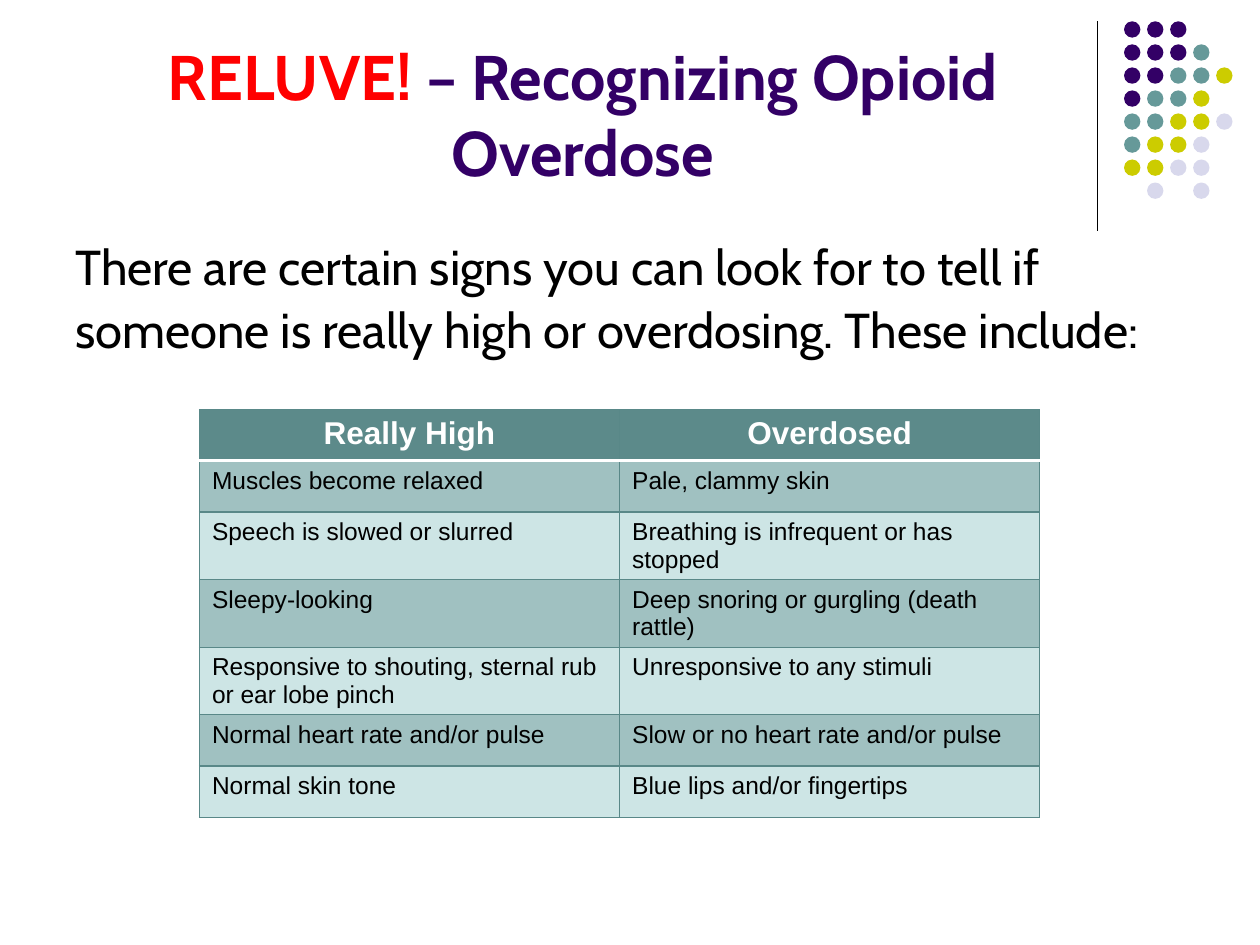
import pptx
import pptx.util
import pptx.dml.color
import pptx.enum.shapes
import pptx.enum.text
import pptx.oxml
import pptx.oxml.ns
from pptx.util import Cm, Pt

HUES = {
    "ink": "000000", "white": "FFFFFF", "red": "FF0000",
    "plum": "330066", "teal": "669999", "lime": "CCCC00", "mist": "D8D8EC",
    "head": "5C8A8A", "dark": "A0C1C1", "light": "CDE5E5", "edge": "598888",
}
DOTS = ["PPP", "PPPT", "PPTTL", "PTTL", "TTLLM", "TLLM", "LLMM", " M M"]
KEYS = {"P": "plum", "T": "teal", "L": "lime", "M": "mist"}
STEP = 3.25 / (len(DOTS) - 1)
ROWS = [
    ("Really High", "Overdosed"),
    ("Muscles become relaxed", "Pale, clammy skin"),
    ("Speech is slowed or slurred", "Breathing is infrequent or has stopped"),
    ("Sleepy-looking", "Deep snoring or gurgling (death rattle)"),
    ("Responsive to shouting, sternal rub or ear lobe pinch",
     "Unresponsive to any stimuli"),
    ("Normal heart rate and/or pulse", "Slow or no heart rate and/or pulse"),
    ("Normal skin tone", "Blue lips and/or fingertips"),
]
TITLE = {"name": "Cabin", "size": Pt(36), "bold": True}
BODY = {"name": "Cabin", "size": Pt(28), "bold": False}
HEAD = {"name": "Arial", "size": Pt(18), "bold": True}
CELL = {"name": "Arial", "size": Pt(14), "bold": False}
MID = pptx.enum.text.PP_ALIGN.CENTER


def rgb(hue):
    return pptx.dml.color.RGBColor.from_string(HUES[hue])


def paint(thing, hue):
    thing.fill.solid()
    thing.fill.fore_color.rgb = rgb(hue)


def add_run(para, text, form, hue):
    run = para.add_run()
    run.text = text
    for key, value in form.items():
        setattr(run.font, key, value)
    run.font.color.rgb = rgb(hue)


def add_box(slide, left, top, width, height):
    box = slide.shapes.add_textbox(Cm(left), Cm(top), Cm(width), Cm(height))
    box.text_frame.word_wrap = True
    return box.text_frame


def add_title(slide):
    frame = add_box(slide, 1.27, 0.33, 20.96, 3.61)
    frame.vertical_anchor = pptx.enum.text.MSO_ANCHOR.BOTTOM
    para = frame.paragraphs[0]
    para.alignment = MID
    add_run(para, "RELUVE!", TITLE, "red")
    add_run(para, " – Recognizing Opioid Overdose", TITLE, "plum")


def add_body(slide, lines):
    frame = add_box(slide, 1.27, 4.78, 22.86, 12.24)
    for i, line in enumerate(lines):
        para = frame.add_paragraph() if i else frame.paragraphs[0]
        para.line_spacing = 0.9
        para.space_before = Pt(5.6)
        props = para._p.get_or_add_pPr()
        props.set("marL", str(Cm(1.57)))
        props.set("indent", str(Cm(-1.57)))
        add_run(para, line, BODY, "ink")


def add_rule(slide):
    rule = slide.shapes.add_connector(
        pptx.enum.shapes.MSO_CONNECTOR.STRAIGHT,
        Cm(22.12), Cm(0.43), Cm(22.12), Cm(4.65))
    rule.line.color.rgb = rgb("ink")
    rule.line.width = Pt(0.75)
    rule._element.spPr.append(pptx.oxml.parse_xml(
        f'<a:effectLst {pptx.oxml.ns.nsdecls("a")}/>'))


def add_dots(slide):
    group = slide.shapes.add_group_shape()
    for i, line in enumerate(DOTS):
        for j, key in enumerate(line):
            if key == " ":
                continue
            dot = group.shapes.add_shape(
                pptx.enum.shapes.MSO_SHAPE.OVAL,
                Cm(22.66 + STEP * j), Cm(0.43 + STEP * i), Cm(0.33), Cm(0.33))
            dot.shadow.inherit = False
            paint(dot, KEYS[key])
            dot.line.fill.background()


def set_edges(cell, edges):
    """Draw cell borders; edges maps L, R, T, B to (hue, points)."""
    props = cell._tc.get_or_add_tcPr()
    for i, (side, (hue, size)) in enumerate(edges.items()):
        props.insert(i, pptx.oxml.parse_xml(
            f'<a:ln{side} {pptx.oxml.ns.nsdecls("a")} w="{Pt(size)}">'
            f'<a:solidFill><a:srgbClr val="{HUES[hue]}"/></a:solidFill>'
            f'</a:ln{side}>'))


def add_signs(slide):
    table = slide.shapes.add_table(
        len(ROWS), 2, Cm(4.02), Cm(8.26), Cm(16.94), Cm(7.21)).table
    for col in table.columns:
        col.width = Cm(8.47)
    for i, texts in enumerate(ROWS):
        table.rows[i].height = Cm(1.03)
        for j, text in enumerate(texts):
            cell = table.cell(i, j)
            cell.margin_bottom = Cm(0.05)
            para = cell.text_frame.paragraphs[0]
            edges = dict.fromkeys("LRTB", ("edge", 0.75))
            if i == 0:
                para.alignment = MID
                add_run(para, text, HEAD, "white")
                paint(cell, "head")
                edges["B"] = ("white", 2)
            else:
                add_run(para, text, CELL, "ink")
                paint(cell, "dark" if i % 2 else "light")
                if i == 1:
                    edges["T"] = ("white", 2)
            set_edges(cell, edges)


def main():
    deck = pptx.Presentation()
    deck.slide_width, deck.slide_height = Cm(25.4), Cm(19.05)
    slide = deck.slides.add_slide(deck.slide_layouts[6])
    add_rule(slide)
    add_dots(slide)
    add_title(slide)
    add_body(slide, [
        "There are certain signs you can look for to tell if",
        "someone is really high or overdosing. These include:",
    ])
    add_signs(slide)
    deck.save("out.pptx")


if __name__ == "__main__":
    main()
